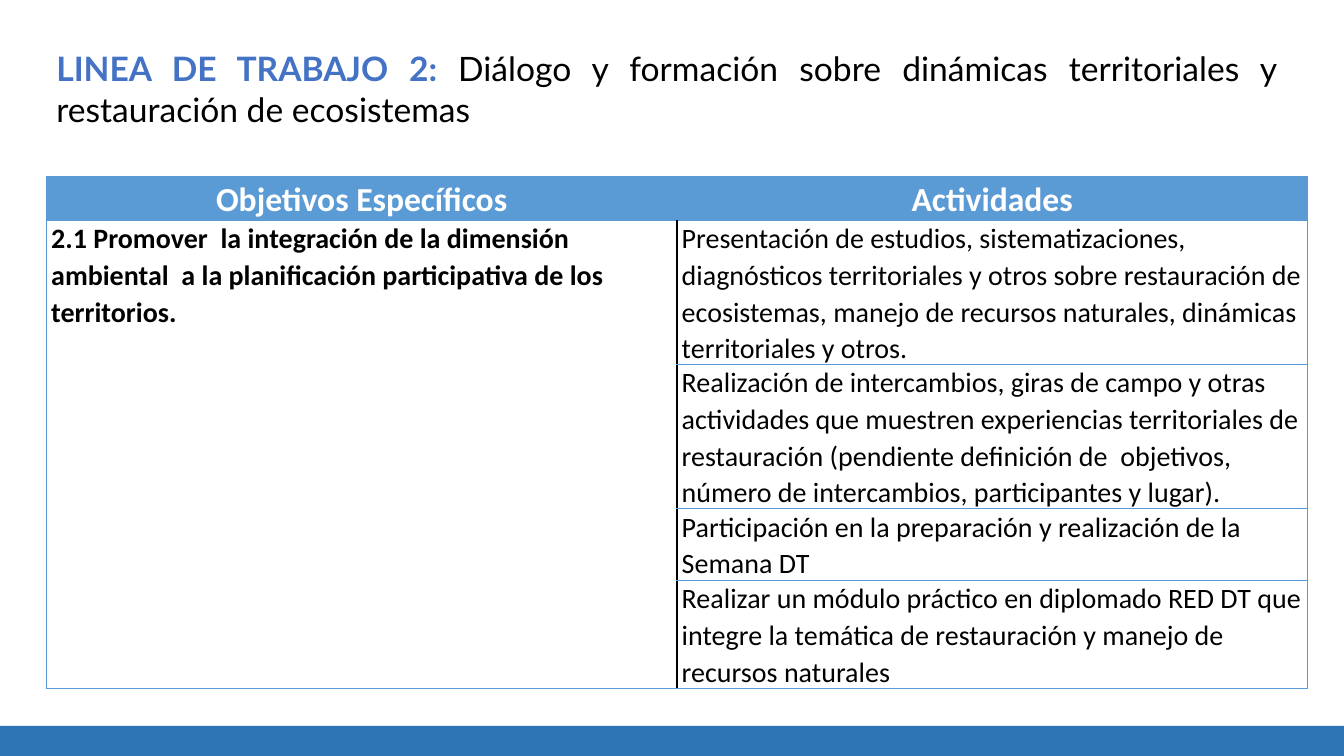
import pptx
import pptx.dml.color
import pptx.enum.shapes
import pptx.enum.text
import pptx.oxml
import pptx.oxml.ns
import pptx.util

Cm = pptx.util.Cm
Pt = pptx.util.Pt
Align = pptx.enum.text.PP_ALIGN
Anchor = pptx.enum.text.MSO_ANCHOR

COLORS = {
    "bar": "2E75B6",
    "head": "5B9BD5",
    "title": "4472C4",
    "text": "000000",
    "white": "FFFFFF",
}

HEADS = ["Objetivos Específicos", "Actividades"]
GOAL = ("2.1 Promover  la integración de la dimensión ambiental  a la "
        "planificación participativa de los territorios.")
TASKS = [
    "Presentación de estudios, sistematizaciones, diagnósticos territoriales "
    "y otros sobre restauración de ecosistemas, manejo de recursos naturales, "
    "dinámicas territoriales y otros.",
    "Realización de intercambios, giras de campo y otras actividades que "
    "muestren experiencias territoriales de restauración (pendiente "
    "definición de  objetivos, número de intercambios, participantes y lugar).",
    "Participación en la preparación y realización de la Semana DT",
    "Realizar un módulo práctico en diplomado RED DT que integre la temática "
    "de restauración y manejo de recursos naturales",
]


class Deck:
    def __init__(self, wide, high):
        self.show = pptx.Presentation()
        self.show.slide_width = Cm(wide)
        self.show.slide_height = Cm(high)
        self.slide = self.show.slides.add_slide(self.show.slide_layouts[6])

    def tint(self, name):
        return pptx.dml.color.RGBColor.from_string(COLORS[name])

    def style(self, run, font, size, color, bold):
        run.font.name = font
        run.font.size = Pt(size)
        run.font.bold = bold
        run.font.color.rgb = self.tint(color)

    def bar(self, left, top, wide, high, color):
        shape = self.slide.shapes.add_shape(
            pptx.enum.shapes.MSO_SHAPE.RECTANGLE,
            Cm(left), Cm(top), Cm(wide), Cm(high))
        shape.shadow.inherit = False
        shape.fill.solid()
        shape.fill.fore_color.rgb = self.tint(color)
        shape.line.fill.background()

    def title(self, left, top, wide, high, parts):
        box = self.slide.shapes.add_textbox(
            Cm(left), Cm(top), Cm(wide), Cm(high))
        box.text_frame.word_wrap = True
        line = box.text_frame.paragraphs[0]
        line.alignment = Align.JUSTIFY
        for text, color, bold in parts:
            run = line.add_run()
            run.text = text
            self.style(run, "Lato", 24, color, bold)

    def grid(self, left, top, wide, rows, cols):
        frame = self.slide.shapes.add_table(
            len(rows), cols, Cm(left), Cm(top), Cm(wide), Cm(sum(rows)))
        table = frame.table
        table.first_row = False
        table.horz_banding = False
        for row, high in zip(table.rows, rows):
            row.height = Cm(high)
        for col in table.columns:
            col.width = Cm(wide / cols)
        return table

    def edge(self, cell, sides):
        props = cell._tc.get_or_add_tcPr()
        for side in "LRTB":
            color, width = sides.get(side, (None, 0))
            fill = "<a:noFill/>"
            if color:
                fill = f'<a:solidFill><a:srgbClr val="{COLORS[color]}"/></a:solidFill>'
            props.append(pptx.oxml.parse_xml(
                f'<a:ln{side} {pptx.oxml.ns.nsdecls("a")} w="{Pt(width)}">'
                f'{fill}</a:ln{side}>'))

    def cell(self, cell, text, size, color, bold, sides, fill=None,
             align=Align.LEFT, anchor=Anchor.BOTTOM):
        self.edge(cell, sides)
        if fill:
            cell.fill.solid()
            cell.fill.fore_color.rgb = self.tint(fill)
        else:
            cell.fill.background()
        cell.margin_left = cell.margin_right = Cm(0.12)
        cell.margin_top = cell.margin_bottom = 0
        cell.vertical_anchor = anchor
        cell.text_frame.text = text
        line = cell.text_frame.paragraphs[0]
        line.alignment = align
        line.line_spacing = 1.07
        for run in line.runs:
            self.style(run, "Calibri", size, color, bold)


def main():
    deck = Deck(33.87, 19.05)
    deck.bar(0, 18.29, 33.87, 0.76, "bar")
    deck.title(1.17, 1.09, 31.78, 2.31, [
        ("LINEA DE TRABAJO 2: ", "title", True),
        ("Diálogo y formación sobre dinámicas territoriales y  "
         "restauración de ecosistemas", "text", False),
    ])

    table = deck.grid(1.17, 4.45, 31.78, [1.09, 3.63, 3.63, 1.81, 2.72], 2)
    thin, dark = ("head", 0.5), ("text", 1)
    for col, (text, side) in enumerate(zip(HEADS, "LR")):
        deck.cell(table.cell(0, col), text, 24, "white", True,
                  {side: thin, "T": thin}, "head", Align.CENTER)

    table.cell(1, 0).merge(table.cell(len(TASKS), 0))
    for row, text in enumerate(TASKS, 1):
        first = row == 1
        deck.cell(table.cell(row, 0), GOAL if first else "", 20, "text", True,
                  {"L": thin, "R": dark, "T": thin, "B": thin},
                  anchor=Anchor.TOP)
        deck.cell(table.cell(row, 1), text, 20, "text", False,
                  {"L": dark, "R": thin, "T": thin, "B": thin},
                  anchor=Anchor.TOP if first else Anchor.BOTTOM)
    deck.show.save("out.pptx")


if __name__ == "__main__":
    main()
